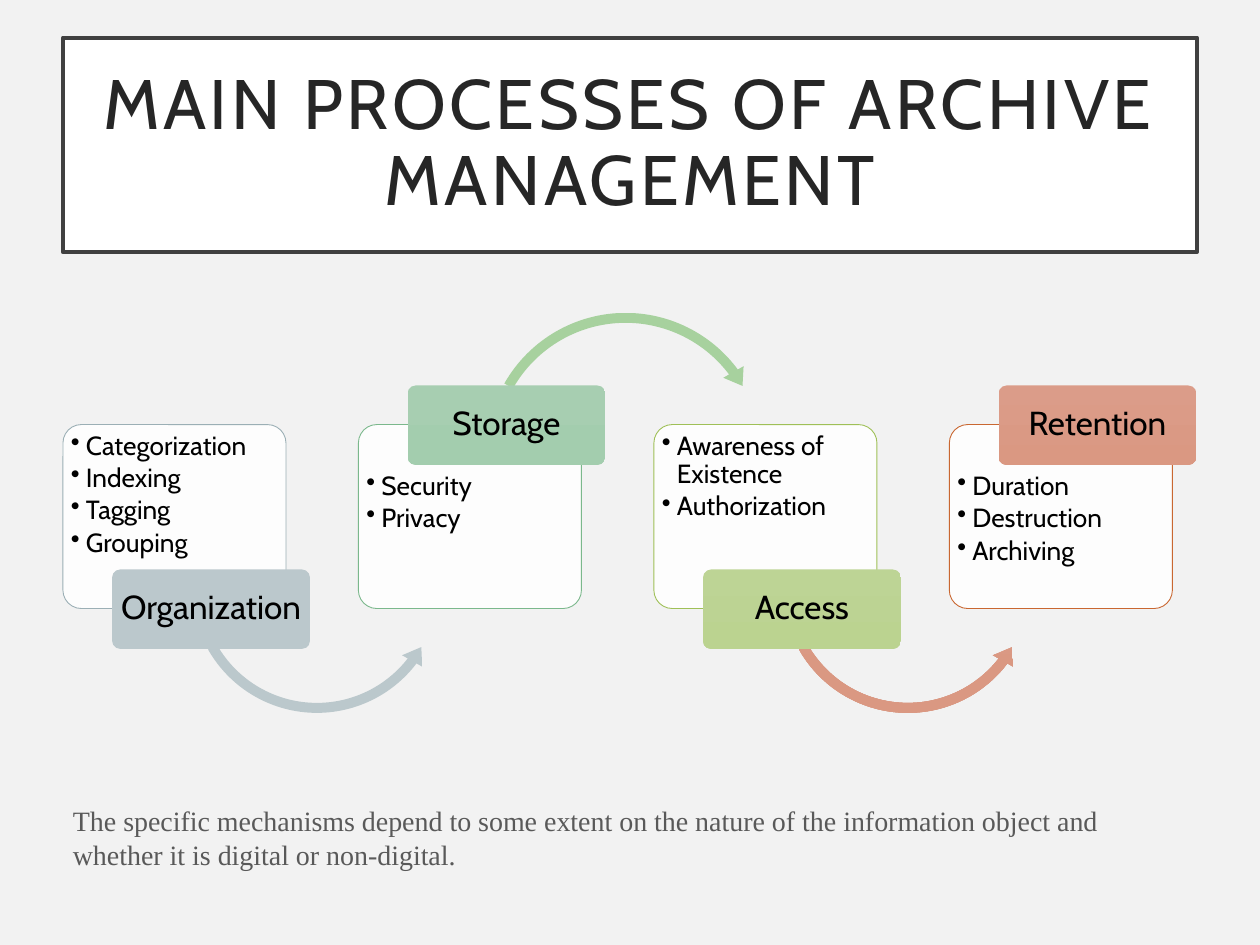
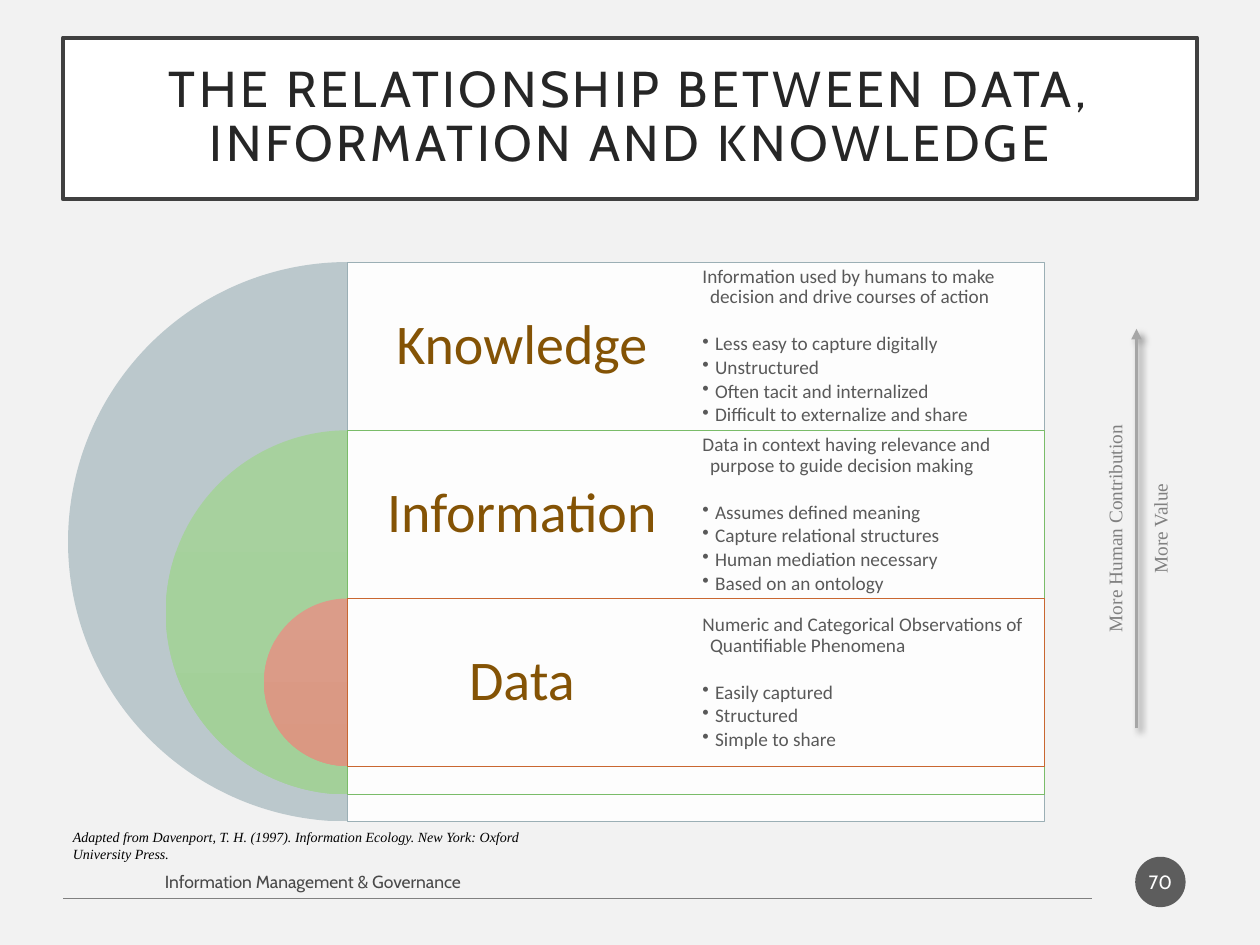
from lxml.etree import SubElement
from pptx import Presentation
from pptx.dml.color import RGBColor
from pptx.enum.shapes import MSO_CONNECTOR, MSO_SHAPE
from pptx.enum.text import MSO_ANCHOR, MSO_AUTO_SIZE, PP_ALIGN
from pptx.oxml.ns import qn
from pptx.util import Inches, Pt

# Shared colours and fonts
BACKGROUND = RGBColor(0xF2, 0xF2, 0xF2)
WHITE = RGBColor(0xFF, 0xFF, 0xFF)
CARD = RGBColor(0xFD, 0xFD, 0xFD)
BLACK = RGBColor(0, 0, 0)
TITLE_TEXT = RGBColor(0x26, 0x26, 0x26)
TITLE_LINE = RGBColor(0x40, 0x40, 0x40)
FOOTER_TEXT = RGBColor(0x49, 0x49, 0x49)
BADGE = RGBColor(0x5D, 0x5D, 0x5D)
BODY = RGBColor(0x59, 0x59, 0x59)
GREY = RGBColor(0x80, 0x80, 0x80)
ARROW_GREY = RGBColor(0xA6, 0xA6, 0xA6)
BROWN = RGBColor(0x84, 0x53, 0x05)
BLUE_LINE = RGBColor(0x9B, 0xAF, 0xB5)
TEAL_LINE = RGBColor(0x7B, 0xB8, 0x8C)
OLIVE_LINE = RGBColor(0x9F, 0xC0, 0x57)
GREEN_LINE = RGBColor(0x7A, 0xBC, 0x69)
RUST_LINE = RGBColor(0xC9, 0x67, 0x31)
# Gradients run from top to bottom
BLUE = (RGBColor(0xBB, 0xC8, 0xCC), RGBColor(0xB8, 0xC6, 0xCB))
TEAL = (RGBColor(0xA7, 0xCE, 0xB1), RGBColor(0xA3, 0xCD, 0xAE))
GREEN = (RGBColor(0xA7, 0xD1, 0x9E), RGBColor(0xA3, 0xD0, 0x99))
OLIVE = (RGBColor(0xBD, 0xD4, 0x95), RGBColor(0xBB, 0xD3, 0x90))
RUST = (RGBColor(0xDB, 0x9C, 0x89), RGBColor(0xDA, 0x98, 0x82))
CABIN, CALIBRI, TIMES = "Cabin", "Calibri", "Times New Roman"


def add_text(tf, lines, size, font=CABIN, color=BLACK, align=PP_ALIGN.LEFT,
             anchor=MSO_ANCHOR.TOP, inset=(0.1, 0.05, 0.1, 0.05), spacing=None,
             after=0, hang=0, bullet=False, lead=None, italic=False, spc=None):
    """Fill a text frame; lead is an unbulleted first line with a gap below."""
    tf.word_wrap = True
    tf.auto_size = MSO_AUTO_SIZE.NONE
    tf.vertical_anchor = anchor
    (tf.margin_left, tf.margin_top,
     tf.margin_right, tf.margin_bottom) = map(Inches, inset)
    for i, line in enumerate([lead, *lines] if lead else lines):
        p = tf.paragraphs[0] if i == 0 else tf.add_paragraph()
        is_lead = bool(lead) and i == 0
        indent = 0.06 if is_lead else hang
        if indent:
            pPr = p._p.get_or_add_pPr()
            pPr.set("marL", str(Inches(indent)))
            pPr.set("indent", str(-Inches(indent)))
            if bullet and not is_lead:
                SubElement(pPr, qn("a:buChar"), char="•")
        p.alignment = align
        if spacing:
            p.line_spacing = spacing
        p.space_after = Pt(15 if is_lead else after)
        r = p.add_run()
        r.text = line
        r.font.name, r.font.size, r.font.italic = font, Pt(size), italic
        r.font.color.rgb = color
        if spc:
            r._r.get_or_add_rPr().set("spc", str(spc))


def add_box(s, kind, x, y, w, h, fill, line=None, adj=()):
    """Add a preset shape with a solid colour or a pair of gradient colours."""
    sp = s.shapes.add_shape(kind, Inches(x), Inches(y), Inches(w), Inches(h))
    sp.shadow.inherit = False
    for i, value in enumerate(adj):
        sp.adjustments[i] = value
    if isinstance(fill, RGBColor):
        sp.fill.solid()
        sp.fill.fore_color.rgb = fill
    else:
        sp.fill.gradient()
        sp.fill.gradient_angle = 270
        for stop, color, position in zip(sp.fill.gradient_stops, fill, (0, 1)):
            stop.color.rgb = color
            stop.position = position
    if line:
        sp.line.color.rgb = line
        sp.line.width = Pt(0.5)
    else:
        sp.line.fill.background()
    return sp


prs = Presentation()
prs.slide_width, prs.slide_height = Inches(10), Inches(7.5)
fill = prs.slide_master.background.fill
fill.solid()
fill.fore_color.rgb = BACKGROUND

# Both slides with their framed titles
slides = []
for title, size, height in (
        ("MAIN PROCESSES OF ARCHIVE MANAGEMENT", 40, 1.7),
        ("THE RELATIONSHIP BETWEEN DATA, INFORMATION AND KNOWLEDGE", 28.8, 1.28)):
    s = prs.slides.add_slide(prs.slide_layouts[5])
    sp = s.shapes.title
    sp.left, sp.top, sp.width, sp.height = map(Inches, (0.5, 0.3, 9, height))
    sp.fill.solid()
    sp.fill.fore_color.rgb = WHITE
    sp.line.color.rgb = TITLE_LINE
    sp.line.width = Pt(2.5)
    add_text(sp.text_frame, [title], size, color=TITLE_TEXT, align=PP_ALIGN.CENTER,
             anchor=MSO_ANCHOR.MIDDLE, inset=(0.2,) * 4, spacing=0.9, spc=200)
    slides.append(s)
processes, relationship = slides

# Slide 1: four process cards, labels alternately below and above
s = processes
LOWER_ARROW = (MSO_SHAPE.LEFT_CIRCULAR_ARROW, 0.97, 3.62, 2.09,
               (0.038, 4.766, 22.521, 90.245, 0.044))
UPPER_ARROW = (MSO_SHAPE.CIRCULAR_ARROW, 0.96, 2.43, 2.32,
               (0.034, 4.262, 193.983, 125.755, 0.04))
steps = [
    ("Organization", ["Categorization", "Indexing", "Tagging", "Grouping"],
     BLUE, BLUE_LINE, LOWER_ARROW, BLUE),
    ("Storage", ["Security", "Privacy"], TEAL, TEAL_LINE, UPPER_ARROW, GREEN),
    ("Access", ["Awareness of Existence", "Authorization"],
     OLIVE, OLIVE_LINE, LOWER_ARROW, RUST),
    ("Retention", ["Duration", "Destruction", "Archiving"],
     RUST, RUST_LINE, None, None),
]
for i, (name, items, color, line, arrow, arrow_color) in enumerate(steps):
    x = 0.5 + 2.345 * i
    label_above = i % 2 == 1
    card = add_box(s, MSO_SHAPE.ROUNDED_RECTANGLE, x, 3.37, 1.77, 1.46, CARD, line, [0.1])
    add_text(card.text_frame, items, 15, inset=(0.02, 0.34 if label_above else 0.02, 0.02, 0),
             spacing=0.9, after=2.25, hang=0.12, bullet=True)
    if arrow:
        kind, dx, y, side, adj = arrow
        add_box(s, kind, x + dx, y, side, side, arrow_color, adj=adj)
    label = add_box(s, MSO_SHAPE.ROUNDED_RECTANGLE, x + 0.39, 3.06 if label_above else 4.52,
                    1.57, 0.63, color, adj=[0.1])
    add_text(label.text_frame, [name], 19, align=PP_ALIGN.CENTER, anchor=MSO_ANCHOR.MIDDLE,
             inset=(0.03,) * 4, spacing=0.9)

note = s.shapes.add_textbox(Inches(0.48), Inches(6.33), Inches(8.92), Inches(0.64))
add_text(note.text_frame, ["The specific mechanisms depend to some extent on the nature of the "
                           "information object and whether it is digital or non-digital."],
         16, TIMES, BODY)

# Slide 2: footer
s = relationship
rule = s.shapes.add_connector(MSO_CONNECTOR.STRAIGHT, Inches(0.5), Inches(7.13),
                              Inches(8.67), Inches(7.13))
rule.line.color.rgb = GREY
rule.line.width = Pt(0.5)
SubElement(rule._element.spPr, qn("a:effectLst"))
footer = s.shapes.add_textbox(Inches(1.21), Inches(6.82), Inches(4.98), Inches(0.35))
add_text(footer.text_frame, ["Information Management & Governance"], 10,
         color=FOOTER_TEXT, anchor=MSO_ANCHOR.MIDDLE)
badge = add_box(s, MSO_SHAPE.OVAL, 9.01, 6.8, 0.4, 0.4, BADGE)
add_text(badge.text_frame, ["70"], 11, color=WHITE, align=PP_ALIGN.CENTER,
         anchor=MSO_ANCHOR.MIDDLE, inset=(0.02, 0.05, 0.02, 0.05))
source = s.shapes.add_textbox(Inches(0.48), Inches(6.53), Inches(3.99), Inches(0.24))
add_text(source.text_frame, ["Adapted from Davenport, T. H. (1997). Information Ecology. "
                             "New York: Oxford University Press."], 8, TIMES, italic=True)

# Nested half discs, each with a panel to the right of the shared centre line
levels = [
    ("Knowledge", 4.44, BLUE, BLUE_LINE,
     "Information used by humans to make decision and drive courses of action",
     ["Less easy to capture digitally", "Unstructured",
      "Often tacit and internalized", "Difficult to externalize and share"]),
    ("Information", 2.89, GREEN, GREEN_LINE,
     "Data in context having relevance and purpose to guide decision making",
     ["Assumes defined meaning", "Capture relational structures",
      "Human mediation necessary", "Based on an ontology"]),
    ("Data", 1.33, RUST, RUST_LINE,
     "Numeric and Categorical Observations of Quantifiable Phenomena",
     ["Easily captured", "Structured", "Simple to share"]),
]
CENTER_X, COLUMN, ROW = 2.76, 2.765, 1.335
for i, (name, size, color, line, meaning, traits) in enumerate(levels):
    y = 2.08 + ROW * i
    add_box(s, MSO_SHAPE.PIE, CENTER_X - size / 2, y, size, size, color, adj=(54, 162))
    add_box(s, MSO_SHAPE.RECTANGLE, CENTER_X, y, 2 * COLUMN, size, CARD, line)
    heading, details = [
        s.shapes.add_textbox(Inches(CENTER_X + COLUMN * col), Inches(y),
                             Inches(COLUMN), Inches(ROW)) for col in range(2)]
    add_text(heading.text_frame, [name], 32, CALIBRI, BROWN, PP_ALIGN.CENTER,
             MSO_ANCHOR.MIDDLE, (0.13,) * 4, spacing=0.9)
    add_text(details.text_frame, traits, 11, CALIBRI, BODY, anchor=MSO_ANCHOR.MIDDLE,
             inset=(0.05,) * 4, spacing=0.9, after=1.65, hang=0.1, bullet=True, lead=meaning)

# Upward arrow with a soft shadow and vertical captions
arrow = s.shapes.add_connector(MSO_CONNECTOR.STRAIGHT, Inches(9.02), Inches(5.78),
                               Inches(9.02), Inches(2.61))
arrow.line.color.rgb = ARROW_GREY
arrow.line.width = Pt(2)
SubElement(arrow.line._get_or_add_ln(), qn("a:tailEnd"), type="triangle")
effects = SubElement(arrow._element.spPr, qn("a:effectLst"))
shadow = SubElement(effects, qn("a:outerShdw"), blurRad=str(Pt(4)), dist=str(Pt(3)),
                    dir="2700000", algn="tl", rotWithShape="0")
shadow_color = SubElement(shadow, qn("a:srgbClr"), val="000000")
SubElement(shadow_color, qn("a:alpha"), val="40000")
for caption, x, width in (("More Human Contribution", 7.89, 1.92), ("More Value", 8.73, 0.96)):
    tb = s.shapes.add_textbox(Inches(x), Inches(4.05), Inches(width), Inches(0.29))
    tb.rotation = 270
    add_text(tb.text_frame, [caption], 11, TIMES, GREY, PP_ALIGN.CENTER)
    tb.text_frame.word_wrap = False

prs.save("out.pptx")
